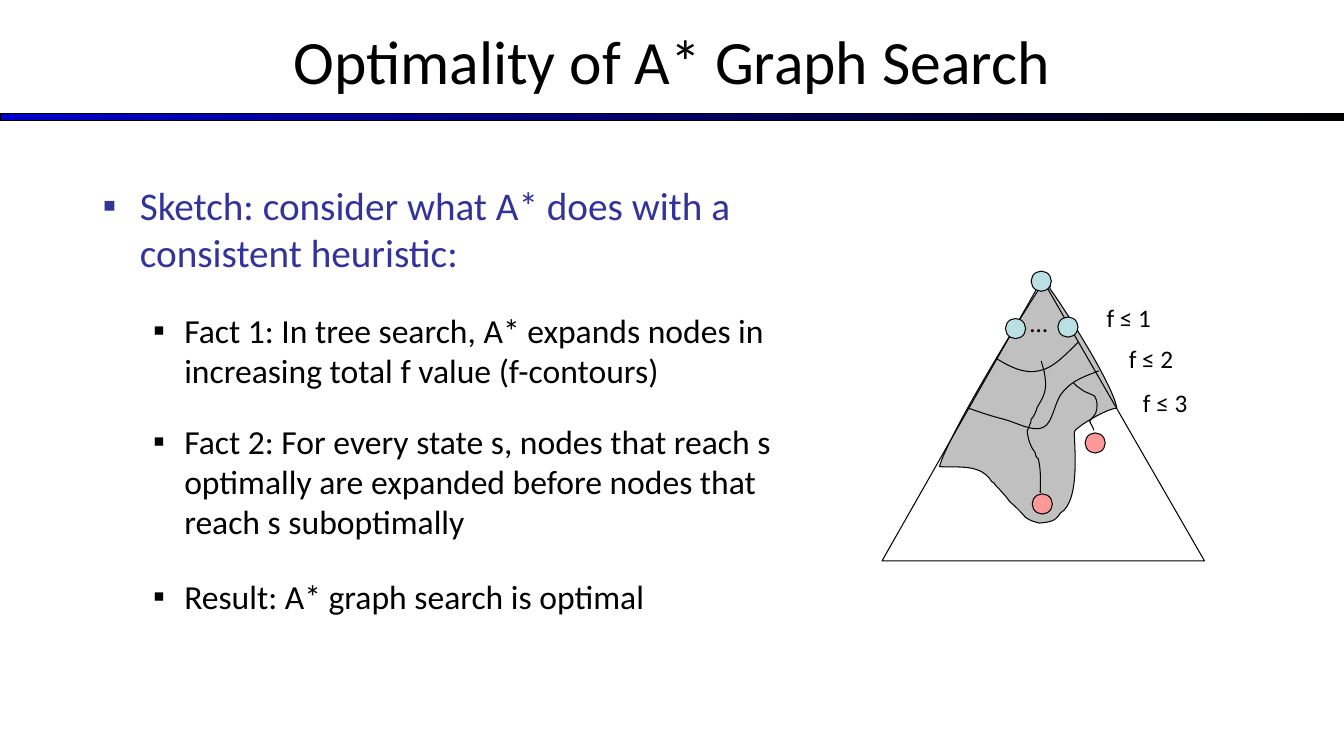
from pptx import Presentation
from pptx.dml.color import RGBColor
from pptx.enum.shapes import MSO_SHAPE
from pptx.enum.text import MSO_ANCHOR, PP_ALIGN
from pptx.oxml.ns import qn
from pptx.util import Inches, Pt
from lxml.etree import SubElement

BLACK = RGBColor(0x00, 0x00, 0x00)
BLUE = RGBColor(0x00, 0x00, 0xCC)
INDIGO = RGBColor(0x33, 0x33, 0x99)
GRAY = RGBColor(0xC0, 0xC0, 0xC0)
TEAL = RGBColor(0xBB, 0xE0, 0xE3)
PINK = RGBColor(0xFF, 0x99, 0x99)

# The grid has ten columns and ten rows to the inch.
COLS, ROWS = 133.33, 75
NODE = 2  # width of a tree node

TREE = [(87.5, 55.65), (119.5, 55.65), (103.4, 27.7)]

# Each curve is a start point, then three points for every cubic step.
REGION = [
    (104.2, 28.7), (105.6, 30.6), (110.4, 38.1), (110.8, 40.5),
    (109.9, 40.5), (107, 42.2), (106.6, 42.8),
    (106.5, 43.6), (107.3, 49.7), (105.2, 50.9),
    (104.7, 51.8), (104, 51.8), (103.1, 51.9),
    (102.4, 51.7), (102.3, 51.7), (101.7, 51.3),
    (101.4, 50.9), (100.7, 50.2), (100.2, 49.8),
    (99.6, 49), (99.9, 49.4), (99.2, 48.6),
    (98, 47.4), (99.2, 48.3), (98.4, 47.8),
    (97.3, 46), (95.2, 46.4), (93.2, 46.3),
    (94, 43.3), (101.1, 31.7), (103, 28.8),
    (104.8, 25.8), (104, 28.7), (104.2, 28.7),
]
LONG = [
    (103.3, 35.8), (103.4, 36.2), (103.5, 36.5), (103.6, 36.9),
    (103.9, 38.6), (103.7, 39.1), (102.9, 40.4),
    (102.8, 40.8), (102.6, 41.3), (102.3, 41.6),
    (102.2, 42.3), (102.3, 41.7), (102.1, 42.3),
    (102, 42.5), (101.9, 42.8), (101.9, 42.8),
    (102, 43.6), (102.2, 44.3), (102.7, 44.9),
    (102.7, 45), (102.7, 45.1), (102.8, 45.3),
    (102.8, 45.4), (102.9, 45.4), (103, 45.5),
    (103.3, 46.7), (103.2, 47.7), (103.2, 48.9),
]
SHORT = [
    (106.5, 38), (106.7, 38.2), (106.9, 38.4), (107.1, 38.5),
    (107.5, 38.9), (108.1, 39), (108.6, 39.3),
    (108.9, 39.8), (108.9, 40.4), (108.7, 41),
    (108.5, 41.3), (108.1, 41.8), (108.1, 41.8),
    (108.2, 42.1), (108.5, 42.4), (108.5, 42.7),
]
LOWER = [
    (109, 36.8), (107.7, 37.3), (106.5, 37.7), (105.6, 38.7),
    (104.6, 39.6), (104.5, 42), (103.5, 42.4),
    (102.5, 42.9), (100.8, 41.9), (99.6, 41.6),
    (98.4, 41.3), (97.2, 40.9), (96.1, 40.5),
]
UPPER = [
    (107, 33.9), (105.7, 35.2), (104.4, 36.6), (103, 36.8),
    (101.6, 37.1), (100.2, 36.4), (98.9, 35.6),
]

# Text, level, points of space before
FACTS = [
    ("Sketch: consider what A* does with a consistent heuristic:", 0, 0),
    ("Fact 1: In tree search, A* expands nodes in increasing total f value "
     "(f-contours)", 1, 24.6),
    ("Fact 2: For every state s, nodes that reach s optimally are expanded "
     "before nodes that reach s suboptimally", 1, 21.5),
    ("Result: A* graph search is optimal", 1, 24.6),
]
# Size, colour, left indent and hanging indent of each level
LEVELS = [(28, INDIGO, 3.7, 3.7), (24, BLACK, 8.1, 3.1)]


def cell(n):
    """Turn grid cells into a length."""
    return Inches(n / 10)


class Page:
    font = "Calibri"
    line = Pt(0.75)

    def __init__(self, slide):
        self.shapes = slide.shapes

    def dress(self, shape, fill=None):
        shape.shadow.inherit = False
        shape.line.color.rgb = BLACK
        shape.line.width = self.line
        if fill is None:
            shape.fill.background()
        else:
            shape.fill.solid()
            shape.fill.fore_color.rgb = fill
        return shape

    def bar(self, x, y, w, h, left, right):
        shape = self.dress(self.shapes.add_shape(
            MSO_SHAPE.RECTANGLE, cell(x), cell(y), cell(w), cell(h)))
        shape.fill.gradient()
        shape.fill.gradient_angle = 0
        for stop, at, tint in zip(shape.fill.gradient_stops, (0, 1), (left, right)):
            stop.position = at
            stop.color.rgb = tint

    def node(self, x, y, fill):
        self.dress(self.shapes.add_shape(
            MSO_SHAPE.OVAL, cell(x), cell(y), cell(NODE), cell(NODE)), fill)

    def outline(self, dots, fill=None, close=False):
        first, *rest = [(cell(x), cell(y)) for x, y in dots]
        pen = self.shapes.build_freeform(*first)
        pen.add_line_segments(rest, close=close)
        return self.dress(pen.convert_to_shape(), fill)

    def curve(self, dots, fill=None, close=False):
        """Draw an outline whose points, three by three, are cubic steps."""
        shape = self.outline(dots, fill, close)
        lines = list(shape._element.iter(qn("a:lnTo")))
        for i in range(0, len(dots) - 1, 3):
            step = SubElement(lines[i].getparent(), qn("a:cubicBezTo"))
            lines[i].addprevious(step)
            for line in lines[i:i + 3]:
                step.append(line[0])
                line.getparent().remove(line)

    def box(self, x, y, w, h):
        frame = self.shapes.add_textbox(
            cell(x), cell(y), cell(w), cell(h)).text_frame
        frame.word_wrap = True
        return frame

    def run(self, para, text, size, tint=BLACK):
        run = para.add_run()
        run.text = text
        run.font.name = self.font
        run.font.size = Pt(size)
        run.font.color.rgb = tint

    def label(self, text, x, y, w, h=4, size=18):
        frame = self.box(x, y, w, h)
        self.run(frame.paragraphs[0], text, size)
        return frame

    def title(self, text):
        frame = self.label(text, 0, -0.3, COLS, 12.5, 44)
        frame.vertical_anchor = MSO_ANCHOR.MIDDLE
        frame.paragraphs[0].alignment = PP_ALIGN.CENTER

    def list(self, items, x, y, w, h):
        frame = self.box(x, y, w, h)
        for i, (text, level, space) in enumerate(items):
            para = frame.add_paragraph() if i else frame.paragraphs[0]
            size, tint, left, hang = LEVELS[level]
            para.level = level
            para.space_before = Pt(space)
            self.run(para, text, size, tint)
            self.bullet(para, left, hang, tint)

    def bullet(self, para, left, hang, tint):
        props = para._p.get_or_add_pPr()
        props.set("marL", str(cell(left)))
        props.set("indent", str(-cell(hang)))
        hue = SubElement(props, qn("a:buClr"))
        SubElement(hue, qn("a:srgbClr"), val=str(tint))
        SubElement(props, qn("a:buFont"), typeface="Arial")
        SubElement(props, qn("a:buChar"), char="▪")


def main():
    deck = Presentation()
    deck.slide_width, deck.slide_height = cell(COLS), cell(ROWS)
    page = Page(deck.slides.add_slide(deck.slide_layouts[6]))

    page.bar(0.03, 11.3, COLS, 0.7, BLUE, BLACK)
    page.curve(REGION, GRAY, close=True)
    page.title("Optimality of A* Graph Search")
    page.list(FACTS, 9.2, 17.5, 68.3, 48.3)

    page.outline(TREE, close=True)
    for x, y in [(99.75, 31.6), (104.95, 31.45)]:
        page.node(x, y, TEAL)
    page.label("…", 101.2, 30, 3)
    for x, y in [(107.65, 42.95), (102.4, 49)]:
        page.node(x, y, PINK)
    for dots in (LONG, SHORT):
        page.curve(dots)
    page.node(102.3, 26.9, TEAL)
    for dots in (LOWER, UPPER):
        page.curve(dots)
    for text, x, y in [("f ≤ 3", 112.4, 37.9), ("f ≤ 2", 111, 33.6),
                       ("f ≤ 1", 108.8, 29.5)]:
        page.label(text, x, y, 9)

    deck.save("out.pptx")


if __name__ == "__main__":
    main()
